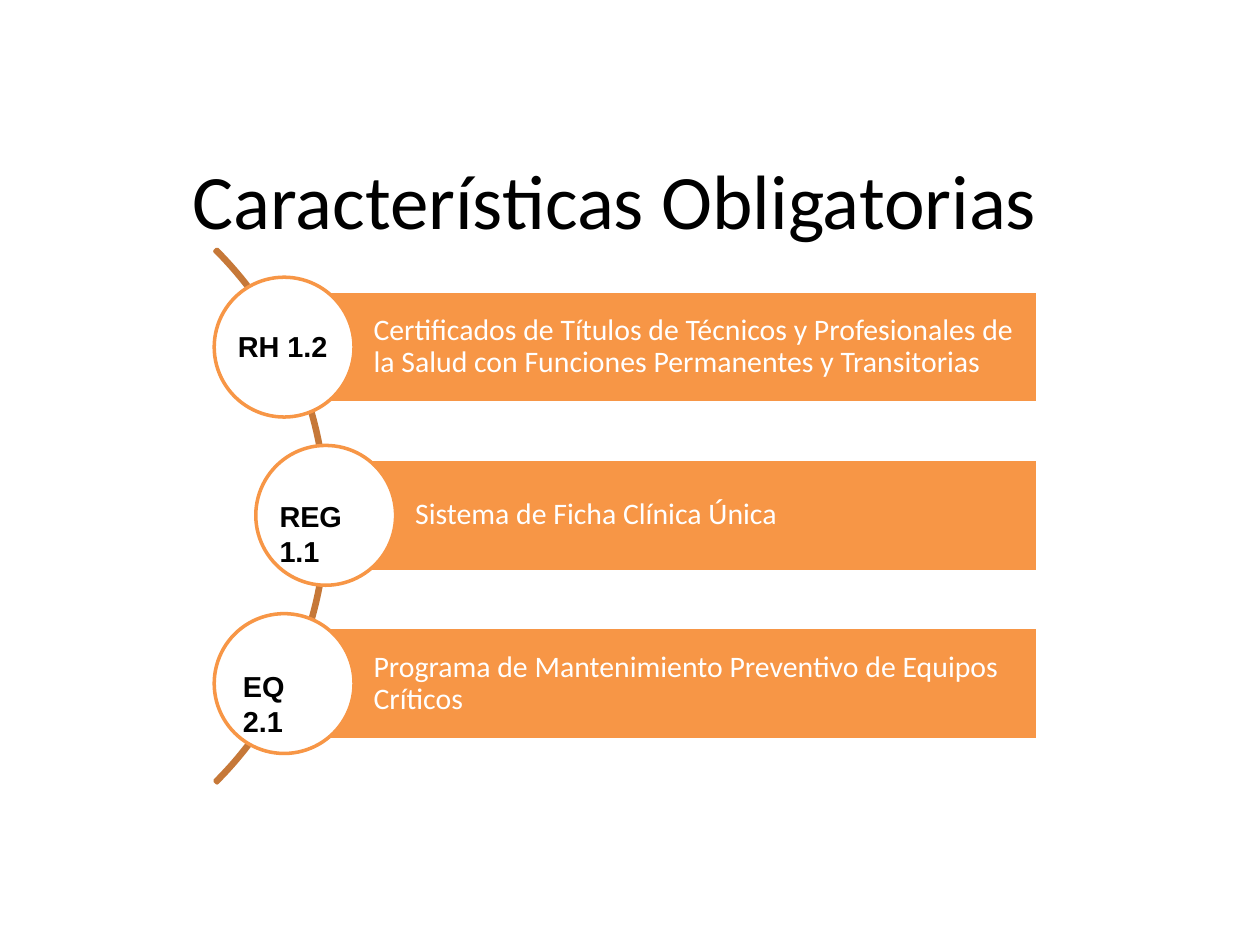
from dataclasses import dataclass

from pptx import Presentation
from pptx.dml.color import RGBColor
from pptx.enum.shapes import MSO_SHAPE as Shape
from pptx.enum.text import MSO_ANCHOR as Anchor, PP_ALIGN as Align
from pptx.util import Inches, Pt

ORANGE, BROWN, WHITE, BLACK = "F79646", "C67838", "FFFFFF", "000000"
FIRST_TOP, PITCH = 2.31, 1.335
BAR_RIGHT, BAR_HEIGHT = 8.24, 0.89
CIRCLE = 1.11
LABEL_TOP, LABEL_PITCH = 2.56, 1.35


@dataclass
class Item:
    code: str
    text: str
    circle_left: float
    label_left: float
    label_width: float
    label_height: float


ITEMS = [
    Item("RH 1.2", "Certificados de Títulos de Técnicos y Profesionales de la Salud "
         "con Funciones Permanentes y Transitorias", 1.7, 1.79, 0.94, 0.38),
    Item("REG 1.1", "Sistema de Ficha Clínica Única", 2.03, 2.12, 0.91, 0.66),
    Item("EQ 2.1", "Programa de Mantenimiento Preventivo de Equipos Críticos",
         1.7, 1.83, 0.87, 0.66),
]


def rgb(color: str) -> RGBColor:
    return RGBColor.from_string(color)


def add_shape(s, kind, left: float, top: float, width: float, height: float,
              fill: str | None, line: str):
    sp = s.shapes.add_shape(kind, Inches(left), Inches(top), Inches(width), Inches(height))
    sp.shadow.inherit = False
    if fill:
        sp.fill.solid()
        sp.fill.fore_color.rgb = rgb(fill)
    else:
        sp.fill.background()
    sp.line.color.rgb = rgb(line)
    sp.line.width = Pt(2)
    return sp


def add_textbox(s, left: float, top: float, width: float, height: float):
    return s.shapes.add_textbox(Inches(left), Inches(top), Inches(width), Inches(height))


def write(sp, text: str, size: float, font: str, color: str, bold: bool = False,
          align=Align.LEFT, anchor=Anchor.TOP):
    tf = sp.text_frame
    tf.word_wrap = True
    tf.vertical_anchor = anchor
    p = tf.paragraphs[0]
    p.alignment = align
    r = p.add_run()
    r.text = text
    r.font.size, r.font.name, r.font.bold = Pt(size), font, bold
    r.font.color.rgb = rgb(color)
    return tf


def add_item(s, item: Item, top: float) -> None:
    """Draw a bar with its text and the circle over its left end."""
    left = item.circle_left + CIRCLE / 2
    bar = add_shape(s, Shape.RECTANGLE, left, top, BAR_RIGHT - left, BAR_HEIGHT, ORANGE, WHITE)
    tf = write(bar, item.text, 17, "Calibri", WHITE, anchor=Anchor.MIDDLE)
    tf.margin_left = Inches(0.71)
    tf.margin_top = tf.margin_right = tf.margin_bottom = Inches(0.05)
    tf.paragraphs[0].line_spacing = 0.9
    tf.paragraphs[0].space_after = Pt(6)
    circle_top = top + (BAR_HEIGHT - CIRCLE) / 2
    add_shape(s, Shape.OVAL, item.circle_left, circle_top, CIRCLE, CIRCLE, WHITE, ORANGE)


def main() -> None:
    prs = Presentation()
    prs.slide_width, prs.slide_height = Inches(10), Inches(7.5)
    s = prs.slides.add_slide(prs.slide_layouts[6])

    title = add_textbox(s, 0.57, 1.03, 8.62, 1.09)
    write(title, "Características Obligatorias", 44, "Calibri", BLACK,
          align=Align.CENTER, anchor=Anchor.MIDDLE)

    arc = add_shape(s, Shape.BLOCK_ARC, -3.39, 1.1, 5.99, 5.99, None, BROWN)
    for i, value in enumerate((189, 27, 0.004)):
        arc.adjustments[i] = value

    for i, item in enumerate(ITEMS):
        add_item(s, item, FIRST_TOP + i * PITCH)
    for i, item in enumerate(ITEMS):
        label = add_textbox(s, item.label_left, LABEL_TOP + i * LABEL_PITCH,
                            item.label_width, item.label_height)
        write(label, item.code, 16.5, "Arial", BLACK, bold=True)

    prs.save("out.pptx")


if __name__ == "__main__":
    main()
